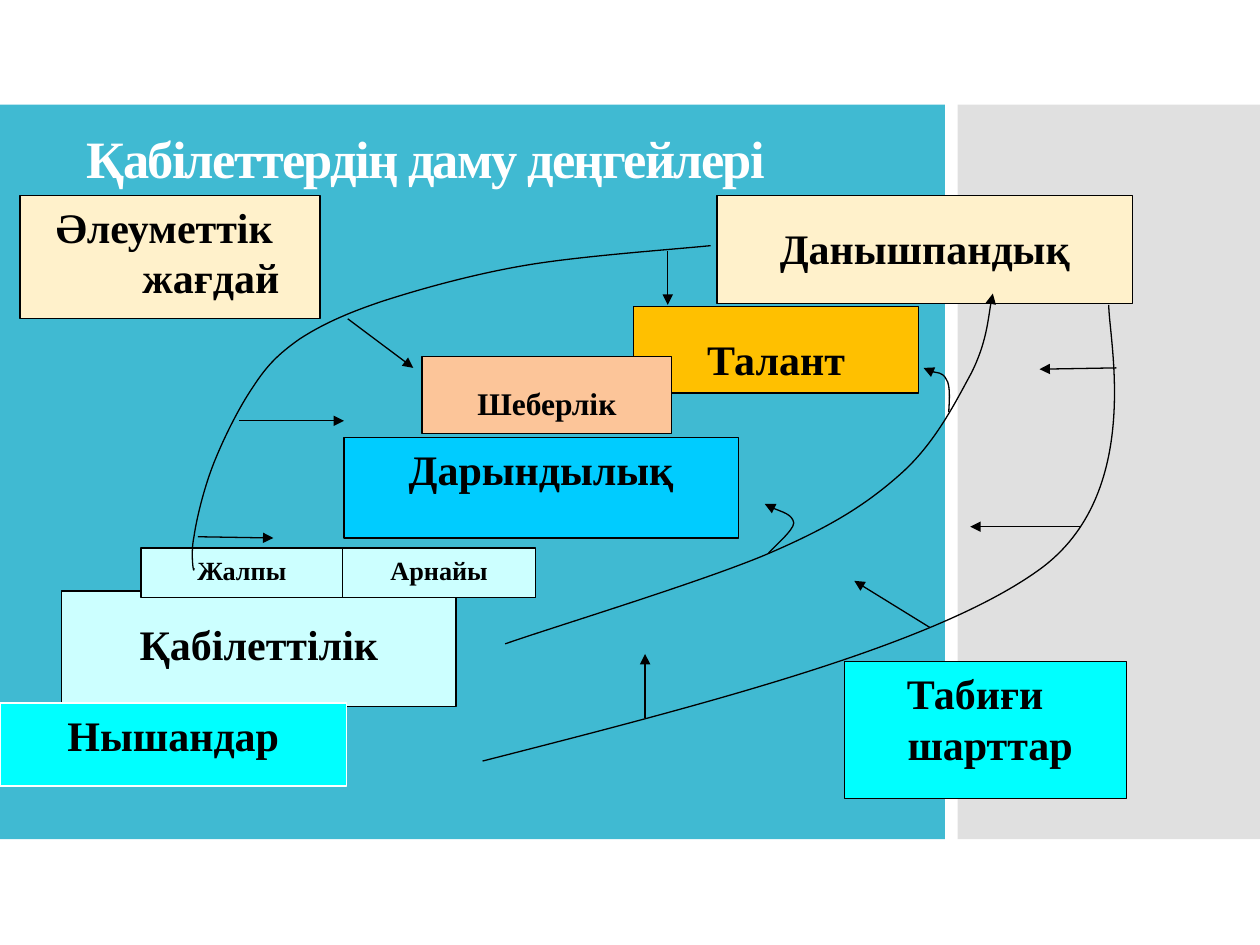
from pptx import Presentation
from pptx import util as u
from pptx.dml.color import RGBColor
from pptx.enum import shapes, text
from pptx.oxml.ns import qn
from lxml import etree

# The slide is a grid of 100 columns by 75 rows of square cells.
COLUMNS, ROWS = 100, 75
CELL = u.Inches(0.1)
FONT = "Times New Roman"

WHITE = RGBColor(0xFF, 0xFF, 0xFF)
BLACK = RGBColor(0x00, 0x00, 0x00)
TEAL = RGBColor(0x40, 0xBA, 0xD2)
GREY = RGBColor(0xC3, 0xC3, 0xC3)
CREAM = RGBColor(0xFF, 0xF1, 0xCB)
GOLD = RGBColor(0xFF, 0xC0, 0x00)
PEACH = RGBColor(0xFC, 0xC5, 0x99)
SKY = RGBColor(0x00, 0xCC, 0xFF)
ICE = RGBColor(0xCC, 0xFF, 0xFF)
CYAN = RGBColor(0x00, 0xFF, 0xFF)

TOP, LOWERED = 0.5, 2.2  # upper text margins of the boxes, in rows
SIDE = 1  # side text margin, in columns

# wording, (column, row, columns, rows), fill, outline, size, upper margin
LEVELS = [
    ("Данышпандық", (56.9, 15.5, 33, 8.6), CREAM, BLACK, 24, LOWERED),
    ("Талант", (50.3, 24.3, 22.6, 6.9), GOLD, BLACK, 24, LOWERED),
    ("Дарындылық", (27.3, 34.7, 31.3, 8), SKY, BLACK, 24, TOP),
    ("Қабілеттілік", (4.9, 46.9, 31.3, 9.2), ICE, BLACK, 24, LOWERED),
    ("Жалпы", (11.2, 43.5, 16, 3.9), ICE, BLACK, 15, TOP),
    ("Арнайы", (27.2, 43.5, 15.3, 3.9), ICE, BLACK, 15, TOP),
    ("Нышандар", (0, 55.8, 27.5, 6.6), CYAN, WHITE, 24, TOP),
    ("Шеберлік", (33.5, 28.3, 19.8, 6.1), PEACH, BLACK, 18, LOWERED),
]

# lines, place, fill, right margin, indent of the second line
FACTORS = [
    (("Әлеуметтік", "жағдай"), (1.6, 15.5, 23.8, 9.8), CREAM, 1.9, 7.4),
    (("Табиғи", "шарттар"), (67, 52.5, 22.4, 10.9), CYAN, 2.6, 2.4),
]

# Bezier knots and handles: start, then three points for each piece
GROWTH = [(40.1, 51.1), (43.5, 49.9), (55.3, 46.3), (60.6, 44.1),
          (65.8, 41.9), (68.7, 40.1), (71.5, 37.6),
          (74.2, 35.2), (75.8, 32), (77.1, 29.6),
          (78.3, 27.2), (78.5, 24.6), (78.8, 23.3)]
TO_GIFTEDNESS = [(61, 43.9), (61.3, 43.5), (63, 42.1), (63, 41.5),
                 (62.9, 40.8), (61.1, 40.3), (60.7, 40)]
TO_TALENT = [(75.3, 32.7), (75.3, 32.3), (75.5, 30.6), (75.1, 30.1),
             (74.8, 29.5), (73, 29.4), (73.3, 29.2)]
NATURAL = [(38.3, 60.4), (56.3, 55.8), (74.2, 51.2), (82.5, 45.2),
           (90.8, 39.2), (88, 27), (88, 24.2)]
SOCIAL = [(15.4, 45.1), (15.4, 45.8), (15.1, 44), (15.4, 42.6),
          (15.6, 41.2), (16.2, 38.7), (17, 36.7),
          (17.8, 34.7), (19, 32.3), (20.1, 30.7),
          (21.2, 29), (22.1, 28.1), (23.8, 26.9),
          (25.5, 25.8), (27.4, 24.9), (30.4, 23.9),
          (33.5, 22.9), (37.8, 21.7), (42.1, 21),
          (46.4, 20.3), (53.4, 19.8), (56.4, 19.5)]
CURVES = [(GROWTH, True), (TO_GIFTEDNESS, True), (TO_TALENT, True),
          (NATURAL, False), (SOCIAL, False)]

ARROWS = [
    ((51.2, 57), (51.2, 51.9)), ((73.8, 49.8), (67.8, 46.1)),
    ((85.8, 41.8), (77, 41.8)), ((88.6, 29.2), (82.5, 29.3)),
    ((15.7, 42.6), (21.7, 42.7)), ((19, 33.4), (27.3, 33.4)),
    ((27.6, 25.3), (32.8, 29.2)), ((53, 19.9), (53, 24.2)),
]


def cells(values):
    return [round(value * CELL) for value in values]


def style_font(run, size, color):
    for name, value in {"name": FONT, "size": u.Pt(size), "bold": True}.items():
        setattr(run.font, name, value)
    run.font.color.rgb = color


def style_line(item, color=BLACK, arrow=False):
    item.line.color.rgb = color
    item.line.width = u.Pt(0.75)
    if arrow:
        outline = item.line._get_or_add_ln()
        etree.SubElement(outline, qn("a:tailEnd"), type="triangle")


def add_panel(slide, place, fill):
    panel = slide.shapes.add_shape(shapes.MSO_SHAPE.RECTANGLE, *cells(place))
    panel.shadow.inherit = False
    panel.fill.solid()
    panel.fill.fore_color.rgb = fill
    panel.line.fill.background()
    return panel


def add_box(slide, lines, place, fill, outline, size, margin,
            right=SIDE, indent=0):
    """Add a box of centred lines; those after the first are indented."""
    box = add_panel(slide, place, fill)
    style_line(box, outline)
    frame = box.text_frame
    settings = {"word_wrap": True, "margin_top": round(margin * CELL),
                "margin_right": round(right * CELL),
                "vertical_anchor": text.MSO_ANCHOR.TOP}
    for name, value in settings.items():
        setattr(frame, name, value)
    for number, wording in enumerate(lines):
        paragraph = frame.add_paragraph() if number else frame.paragraphs[0]
        paragraph.alignment = text.PP_ALIGN.CENTER
        if number:
            paragraph._p.get_or_add_pPr().set("marL", str(round(indent * CELL)))
        run = paragraph.add_run()
        run.text = wording
        style_font(run, size, BLACK)


def add_title(slide, wording):
    title = slide.shapes.add_textbox(*cells((5.9, 12.1, 85, 3.5)))
    title.text_frame.word_wrap = True
    title.text_frame.vertical_anchor = text.MSO_ANCHOR.BOTTOM
    paragraph = title.text_frame.paragraphs[0]
    paragraph.line_spacing = 0.9
    run = paragraph.add_run()
    run.text = wording
    style_font(run, 30, WHITE)
    run._r.get_or_add_rPr().set("spc", "-100")


def add_curve(slide, knots, arrow):
    """Add a freeform and turn each three of its segments into one Bezier."""
    builder = slide.shapes.build_freeform(*cells(knots[0]))
    builder.add_line_segments([cells(knot) for knot in knots[1:]], close=False)
    curve = builder.convert_to_shape()
    segments = list(curve._element.iter(qn("a:lnTo")))
    for first in range(0, len(segments), 3):
        start, *rest = segments[first:first + 3]
        start.tag = qn("a:cubicBezTo")
        for segment in rest:
            start.append(segment[0])
            segment.getparent().remove(segment)
    curve.shadow.inherit = False
    curve.fill.background()
    style_line(curve, arrow=arrow)


def add_arrow(slide, start, end):
    arrow = slide.shapes.add_connector(
        shapes.MSO_CONNECTOR.STRAIGHT, *cells(start + end))
    style_line(arrow, arrow=True)
    etree.SubElement(arrow._element.spPr, qn("a:effectLst"))


def main():
    deck = Presentation()
    deck.slide_width, deck.slide_height = cells((COLUMNS, ROWS))
    slide = deck.slides.add_slide(deck.slide_layouts[6])

    add_panel(slide, (0, 8.3, 75, 58.3), TEAL)
    side = add_panel(slide, (76, 8.3, 24, 58.3), GREY)
    tint = side._element.spPr.find(qn("a:solidFill"))[0]
    etree.SubElement(tint, qn("a:alpha"), val="50000")
    add_title(slide, "Қабілеттердің даму деңгейлері")

    for wording, *look in LEVELS:
        add_box(slide, [wording], *look)
    for knots, arrow in CURVES:
        add_curve(slide, knots, arrow)
    for start, end in ARROWS:
        add_arrow(slide, start, end)
    for lines, place, fill, right, indent in FACTORS:
        add_box(slide, lines, place, fill, BLACK, 24, TOP, right, indent)
    deck.save("out.pptx")


if __name__ == "__main__":
    main()
